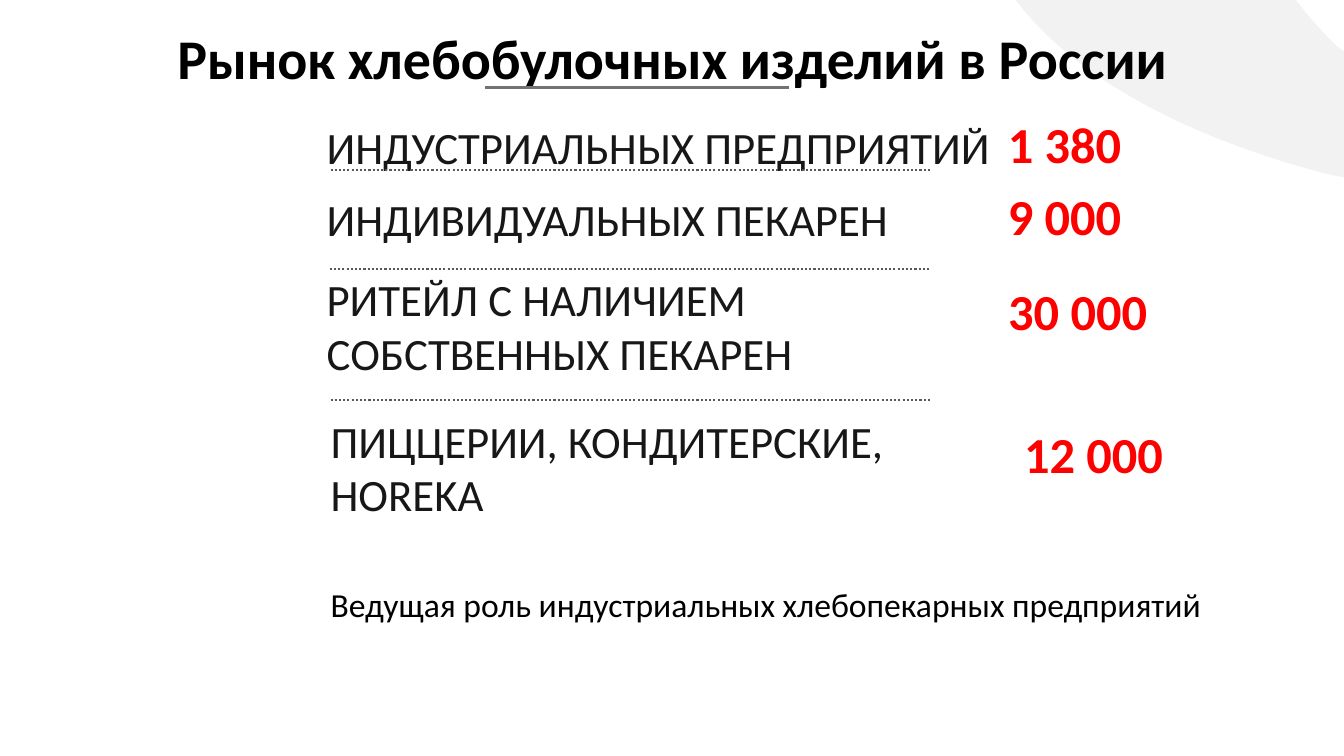
from lxml import etree
from pptx import Presentation
from pptx.dml.color import RGBColor
from pptx.enum.dml import MSO_LINE
from pptx.enum.shapes import MSO_CONNECTOR
from pptx.enum.text import MSO_ANCHOR, MSO_AUTO_SIZE, PP_ALIGN
from pptx.oxml.ns import qn
from pptx.util import Cm, Pt

LEFT, CENTER = PP_ALIGN.LEFT, PP_ALIGN.CENTER
TOP = MSO_ANCHOR.TOP
GROW = MSO_AUTO_SIZE.SHAPE_TO_FIT_TEXT
STRAIGHT = MSO_CONNECTOR.STRAIGHT
DOTTED = MSO_LINE.ROUND_DOT
TITLE_ONLY = 5
FONT = "Calibri"
COLORS = {
    "arc": "F2F2F2",
    "black": "000000",
    "label": "181717",
    "value": "FF0000",
    "underline": "767171",
    "separator": "595959",
}
LABEL_HEIGHT, VALUE_HEIGHT = 1.62, 1.8

MARKET_ROWS = [
    {"label": "ИНДУСТРИАЛЬНЫХ ПРЕДПРИЯТИЙ", "label_box": (0, 0.18, 17.55),
     "value": "1 380", "value_box": (17.15, 0, 3.4), "separator": (0.35, 1.57)},
    {"label": "ИНДИВИДУАЛЬНЫХ ПЕКАРЕН", "label_box": (0, 1.98, 15.04),
     "value": "9 000", "value_box": (17.15, 1.82, 3.4), "separator": (0.33, 4.06)},
    {"label": "РИТЕЙЛ С НАЛИЧИЕМ СОБСТВЕННЫХ ПЕКАРЕН", "label_box": (0, 4.01, 13.1),
     "value": "30 000", "value_box": (17.15, 4.22, 4.06), "separator": (0.35, 7.37)},
    {"label": "ПИЦЦЕРИИ, КОНДИТЕРСКИЕ,\vHOREKA", "label_box": (0.1, 7.57, 15.32),
     "value": "12 000", "value_box": (17.55, 7.82, 4.06), "separator": None},
]


def write_text(shape, text, *, size, color, bold=False, align=LEFT, wrap=False):
    """Fill a shape with one formatted paragraph."""
    frame = shape.text_frame
    frame.word_wrap = wrap
    frame.auto_size = GROW
    frame.vertical_anchor = TOP
    paragraph = frame.paragraphs[0]
    paragraph.text = text
    paragraph.alignment = align
    for run in paragraph.runs:
        run.font.name = FONT
        run.font.size = Pt(size)
        run.font.bold = bold
        run.font.color.rgb = RGBColor.from_string(COLORS[color])


def add_text(slide, text, left, top, width, height, **text_format):
    """Add a text box measured in centimetres."""
    shape = slide.shapes.add_textbox(Cm(left), Cm(top), Cm(width), Cm(height))
    write_text(shape, text, **text_format)


def add_rule(slide, left, top, width, *, color, weight, dash=None):
    """Add a horizontal line without a shadow."""
    rule = slide.shapes.add_connector(STRAIGHT, Cm(left), Cm(top), Cm(left + width), Cm(top))
    rule.line.color.rgb = RGBColor.from_string(COLORS[color])
    rule.line.width = Pt(weight)
    if dash is not None:
        rule.line.dash_style = dash
    etree.SubElement(rule._element.spPr, qn("a:effectLst"))


def curve(start, control_1, control_2, end, steps=24):
    """Return points along a cubic curve, after its start."""
    points = []
    for step in range(1, steps + 1):
        t = step / steps
        weights = ((1 - t) ** 3, 3 * t * (1 - t) ** 2, 3 * t * t * (1 - t), t ** 3)
        corners = (start, control_1, control_2, end)
        points.append(tuple(sum(w * c[axis] for w, c in zip(weights, corners))
                            for axis in (0, 1)))
    return points


def add_corner_arc(slide, left, top):
    """Draw the pale arc behind everything in the top right corner."""
    outline = [(0, 0), (7.06, 0)]
    outline += curve((7.06, 0), (7.37, 0.41), (7.72, 0.81), (8.1, 1.17))
    outline += [(8.27, 1.3), (8.27, 4.47), (7.87, 4.39)]
    outline += curve((7.87, 4.39), (4.22, 3.45), (1.4, 1.88), (0, 0))
    points = [(Cm(left + x), Cm(top + y)) for x, y in outline]
    builder = slide.shapes.build_freeform(*points[0])
    builder.add_line_segments(points[1:], close=True)
    arc = builder.convert_to_shape()
    arc.shadow.inherit = False
    arc.fill.solid()
    arc.fill.fore_color.rgb = RGBColor.from_string(COLORS["arc"])
    arc.line.fill.background()
    slide.shapes._spTree.insert(2, arc._element)


def add_heading(slide, left, top, width, height):
    """Place the title and the short line under it."""
    title = slide.shapes.title
    title.left, title.top, title.width, title.height = map(Cm, (left, top, width, height))
    write_text(title, "Рынок хлебобулочных изделий в России",
               size=40, color="black", bold=True, align=CENTER)
    add_rule(slide, left + 8.13, top + 1.75, 7.67, color="underline", weight=2.25)


def add_market_rows(slide, left, top):
    """List the kinds of bakery with their numbers and separators."""
    for row in MARKET_ROWS:
        x, y, width = row["label_box"]
        add_text(slide, row["label"], left + x, top + y, width, LABEL_HEIGHT,
                 size=32, color="label", wrap=True)
        x, y, width = row["value_box"]
        add_text(slide, row["value"], left + x, top + y, width, VALUE_HEIGHT,
                 size=36, color="value", bold=True, align=CENTER)
        if row["separator"]:
            x, y = row["separator"]
            add_rule(slide, left + x, top + y, 15.11,
                     color="separator", weight=1.5, dash=DOTTED)


def main():
    """Build and save the slide."""
    presentation = Presentation()
    presentation.slide_width, presentation.slide_height = Cm(33.87), Cm(19.05)
    slide = presentation.slides.add_slide(presentation.slide_layouts[TITLE_ONLY])
    add_corner_arc(slide, 25.6, 0)
    add_heading(slide, 4.09, 0.46, 25.7, 1.96)
    add_market_rows(slide, 7.98, 2.72)
    add_text(slide, "Ведущая роль индустриальных хлебопекарных предприятий",
             8.08, 14.6, 22.68, 1.27, size=24, color="black")
    presentation.save("out.pptx")


if __name__ == "__main__":
    main()
